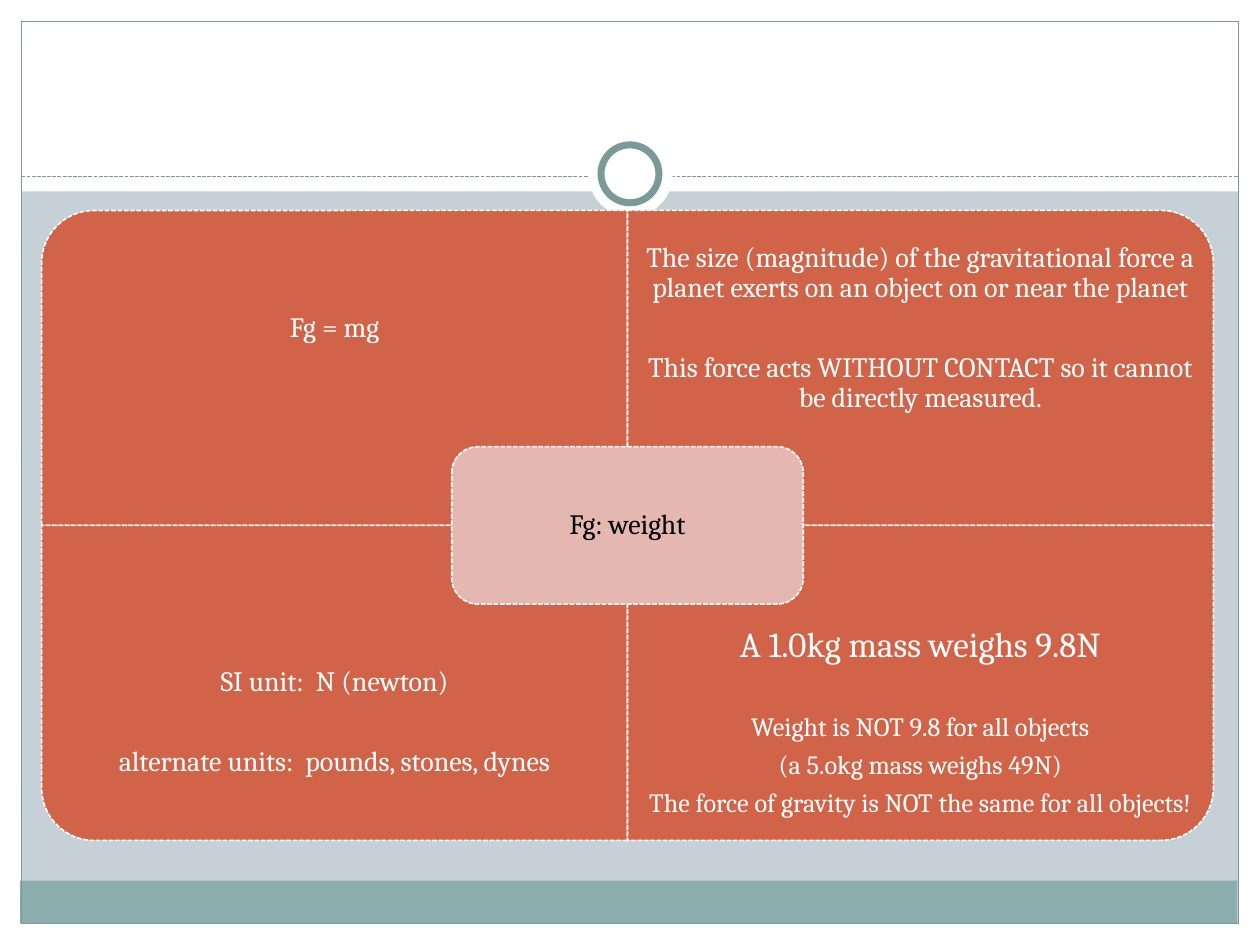
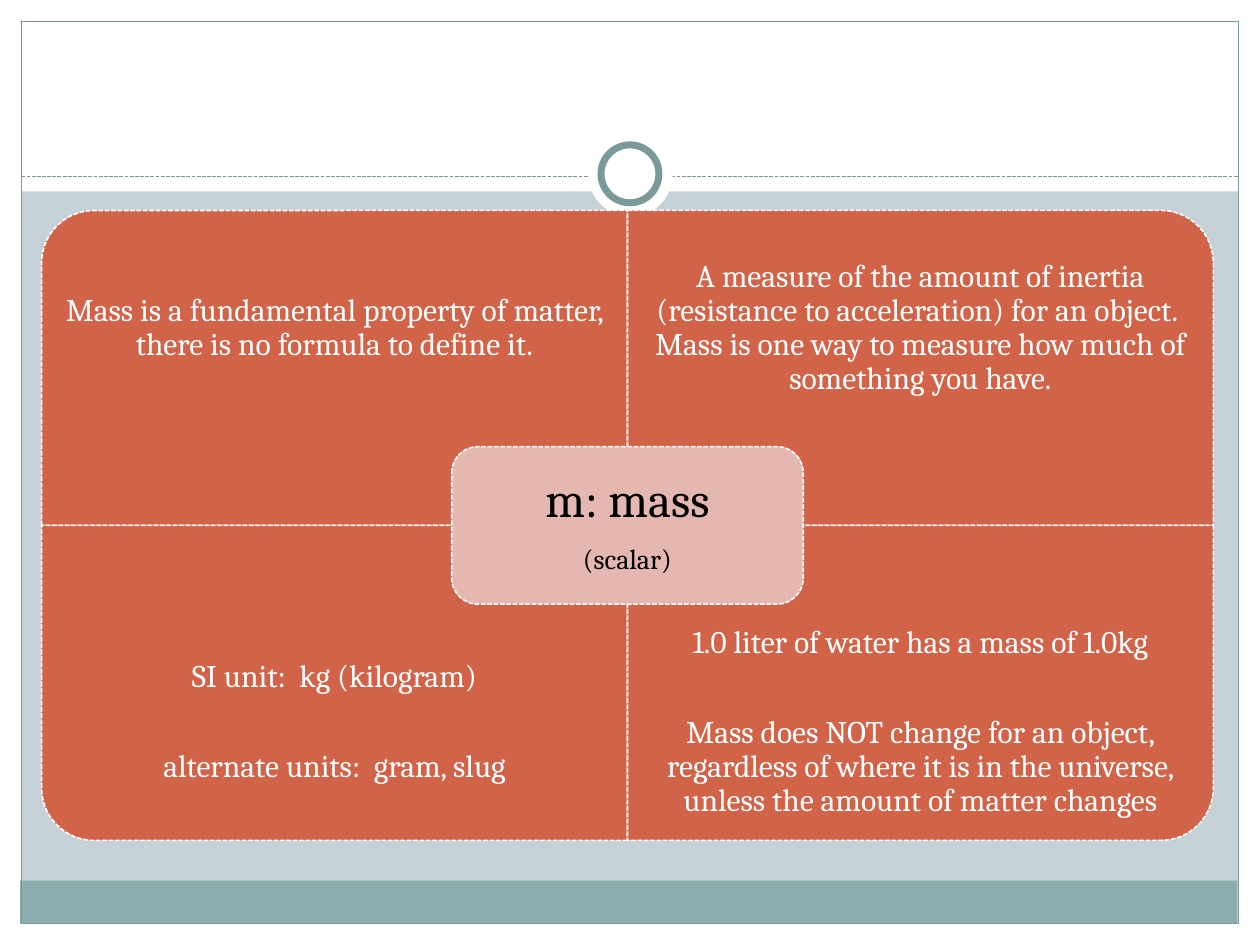
from dataclasses import dataclass

from lxml import etree
from pptx import Presentation
from pptx.dml.color import RGBColor
from pptx.enum import dml, shapes, text
from pptx.oxml import ns
from pptx.util import Inches, Pt

COLORS = {
    "backdrop": "C5D1D7",
    "white": "FFFFFF",
    "band": "8CADAE",
    "rule": "7C999A",
    "quadrant": "D16349",
    "card": "E5B7B1",
    "black": "000000",
}
FONT = "Cambria"
SHAPE = shapes.MSO_SHAPE

PAGE_WIDTH, PAGE_HEIGHT = 10, 7.5
MARGIN = 0.17
LEFT, TOP = 0.33, 1.67
QUAD_WIDTH, QUAD_HEIGHT = 4.65, 2.5
TEXT_HEIGHT = QUAD_HEIGHT * 0.75
CARD_WIDTH, CARD_HEIGHT = QUAD_WIDTH * 0.6, QUAD_HEIGHT / 2
CARD_PADDING = 0.06
LINE_SPACING = 0.9
SPACE_AFTER = 0.35  # share of the text size
WIDE_GAP = 1.42     # extra space that sets two statements apart, times the gap size


@dataclass(frozen=True)
class Box:
    left: float
    top: float
    width: float
    height: float

    def lengths(self) -> list[int]:
        return [Inches(n) for n in (self.left, self.top, self.width, self.height)]

    def turned(self) -> "Box":
        """Swap width and height about the same centre."""
        shift = (self.width - self.height) / 2
        return Box(self.left + shift, self.top - shift, self.height, self.width)


@dataclass(frozen=True)
class Statement:
    words: str
    size: float = 16
    gap: float = 0


@dataclass(frozen=True)
class Note:
    statements: list[Statement]
    inset: float = 0.12


@dataclass(frozen=True)
class Concept:
    """Quadrant notes run by row from the top left."""
    quadrants: list[Note]
    card: Note


@dataclass(frozen=True)
class Corner:
    column: int
    row: int
    rotation: int


CORNERS = [Corner(0, 0, 270), Corner(1, 0, 0), Corner(0, 1, 180), Corner(1, 1, 90)]

CONCEPTS = [
    Concept(
        quadrants=[
            Note([Statement("Fg = mg")]),
            Note([
                Statement("The size (magnitude) of the gravitational force a planet "
                          "exerts on an object on or near the planet", gap=16),
                Statement("This force acts WITHOUT CONTACT so it cannot be directly "
                          "measured."),
            ]),
            Note([
                Statement("SI unit:  N (newton)", gap=16),
                Statement("alternate units:  pounds, stones, dynes"),
            ]),
            Note([
                Statement("A 1.0kg mass weighs 9.8N", 20, gap=15),
                Statement("Weight is NOT 9.8 for all objects", 15),
                Statement("(a 5.okg mass weighs 49N)", 15),
                Statement("The force of gravity is NOT the same for all objects!", 15),
            ], 0.16),
        ],
        card=Note([Statement("Fg: weight")], 0.07),
    ),
    Concept(
        quadrants=[
            Note([Statement("Mass is a fundamental property of matter, there is no "
                            "formula to define it.", 18)], 0.14),
            Note([Statement("A measure of the amount of inertia (resistance to "
                            "acceleration) for an object.  Mass is one way to measure "
                            "how much of something you have.", 18)], 0.14),
            Note([
                Statement("SI unit:  kg (kilogram)", 18, gap=18),
                Statement("alternate units:  gram, slug", 18),
            ], 0.14),
            Note([
                Statement("1.0 liter of water has a mass of 1.0kg", 18, gap=18),
                Statement("Mass does NOT change for an object, regardless of where it "
                          "is in the universe, unless the amount of matter changes", 18),
            ], 0.14),
        ],
        card=Note([Statement("m: mass", 28), Statement("(scalar)")]),
    ),
]


def color(name: str) -> RGBColor:
    return RGBColor.from_string(COLORS[name])


def style_line(line, name: str, width: float, dashed: bool = False) -> None:
    line.color.rgb = color(name)
    line.width = Pt(width)
    if dashed:
        line.dash_style = dml.MSO_LINE.SQUARE_DOT


def add_block(canvas, kind, box: Box, fill: str | None = None,
              line: str | None = None, width: float = 0.75, dashed: bool = False):
    block = canvas.add_shape(kind, *box.lengths())
    block.shadow.inherit = False
    if fill:
        block.fill.solid()
        block.fill.fore_color.rgb = color(fill)
    else:
        block.fill.background()
    if line:
        style_line(block.line, line, width, dashed)
    else:
        block.line.fill.background()
    return block


def add_note(canvas, box: Box, note: Note, ink: str) -> None:
    frame = canvas.add_textbox(*box.lengths()).text_frame
    frame.word_wrap = True
    frame.vertical_anchor = text.MSO_ANCHOR.MIDDLE
    frame.margin_left = frame.margin_right = Inches(note.inset)
    frame.margin_top = frame.margin_bottom = Inches(note.inset)
    for index, statement in enumerate(note.statements):
        para = frame.add_paragraph() if index else frame.paragraphs[0]
        para.alignment = text.PP_ALIGN.CENTER
        para.line_spacing = LINE_SPACING
        para.space_after = Pt(SPACE_AFTER * statement.size + WIDE_GAP * statement.gap)
        span = para.add_run()
        span.text = statement.words
        span.font.name = FONT
        span.font.size = Pt(statement.size)
        span.font.color.rgb = color(ink)


def draw_frame(canvas) -> list:
    """Draw the white border, footer band, outline and title rule with its ring."""
    inner_width = PAGE_WIDTH - 2 * MARGIN
    parts = [add_block(canvas, SHAPE.RECTANGLE, box, "white") for box in (
        Box(0, PAGE_HEIGHT - MARGIN, PAGE_WIDTH, MARGIN),
        Box(0, 0, PAGE_WIDTH, 1.52),
        Box(0, 0, MARGIN, PAGE_HEIGHT),
        Box(PAGE_WIDTH - MARGIN, 0, MARGIN, PAGE_HEIGHT),
    )]
    parts.append(add_block(canvas, SHAPE.RECTANGLE,
                           Box(0.16, 6.99, inner_width, 0.34), "band"))
    parts.append(add_block(canvas, SHAPE.RECTANGLE,
                           Box(MARGIN, MARGIN, inner_width, PAGE_HEIGHT - 2 * MARGIN),
                           line="rule"))
    rule = canvas.add_connector(shapes.MSO_CONNECTOR.STRAIGHT, Inches(MARGIN),
                                Inches(1.4), Inches(PAGE_WIDTH - MARGIN), Inches(1.4))
    style_line(rule.line, "rule", 0.75, dashed=True)
    etree.SubElement(rule.element.spPr, ns.qn("a:effectLst"))
    parts.append(rule)
    parts.append(add_block(canvas, SHAPE.OVAL, Box(4.67, 1.05, 0.67, 0.67), "white"))
    parts.append(add_block(canvas, SHAPE.OVAL, Box(4.77, 1.15, 0.46, 0.46),
                           "white", "rule", 4))
    return parts


def share_frame(page) -> None:
    """Move the frame drawn on a page into its layout, in place of the placeholders."""
    tree = page.slide_layout.shapes.element
    for holder in list(page.slide_layout.placeholders):
        tree.remove(holder.element)
    for part in draw_frame(page.shapes):
        tree.append(part.element)


def draw_matrix(page, concept: Concept) -> None:
    canvas = page.shapes.add_group_shape().shapes
    for corner, note in zip(CORNERS, concept.quadrants):
        left = LEFT + corner.column * QUAD_WIDTH
        top = TOP + corner.row * QUAD_HEIGHT
        box = Box(left, top, QUAD_WIDTH, QUAD_HEIGHT)
        quadrant = add_block(canvas, SHAPE.ROUND_1_RECTANGLE,
                             box.turned() if corner.rotation % 180 else box,
                             "quadrant", "white", 0.9, dashed=True)
        quadrant.rotation = corner.rotation
        text_top = top + corner.row * (QUAD_HEIGHT - TEXT_HEIGHT)
        add_note(canvas, Box(left, text_top, QUAD_WIDTH, TEXT_HEIGHT), note, "white")

    card = Box(LEFT + QUAD_WIDTH - CARD_WIDTH / 2, TOP + QUAD_HEIGHT - CARD_HEIGHT / 2,
               CARD_WIDTH, CARD_HEIGHT)
    add_block(canvas, SHAPE.ROUNDED_RECTANGLE, card, "card", "white", 0.9, dashed=True)
    add_note(canvas, Box(card.left + CARD_PADDING, card.top + CARD_PADDING,
                         card.width - 2 * CARD_PADDING, card.height - 2 * CARD_PADDING),
             concept.card, "black")


def main() -> None:
    deck = Presentation()
    deck.slide_width, deck.slide_height = Inches(PAGE_WIDTH), Inches(PAGE_HEIGHT)
    backdrop = deck.slide_master.background.fill
    backdrop.solid()
    backdrop.fore_color.rgb = color("backdrop")
    blank = deck.slide_layouts.get_by_name("Blank")
    for index, concept in enumerate(CONCEPTS):
        page = deck.slides.add_slide(blank)
        if index == 0:
            share_frame(page)
        draw_matrix(page, concept)
    deck.save("out.pptx")


if __name__ == "__main__":
    main()
